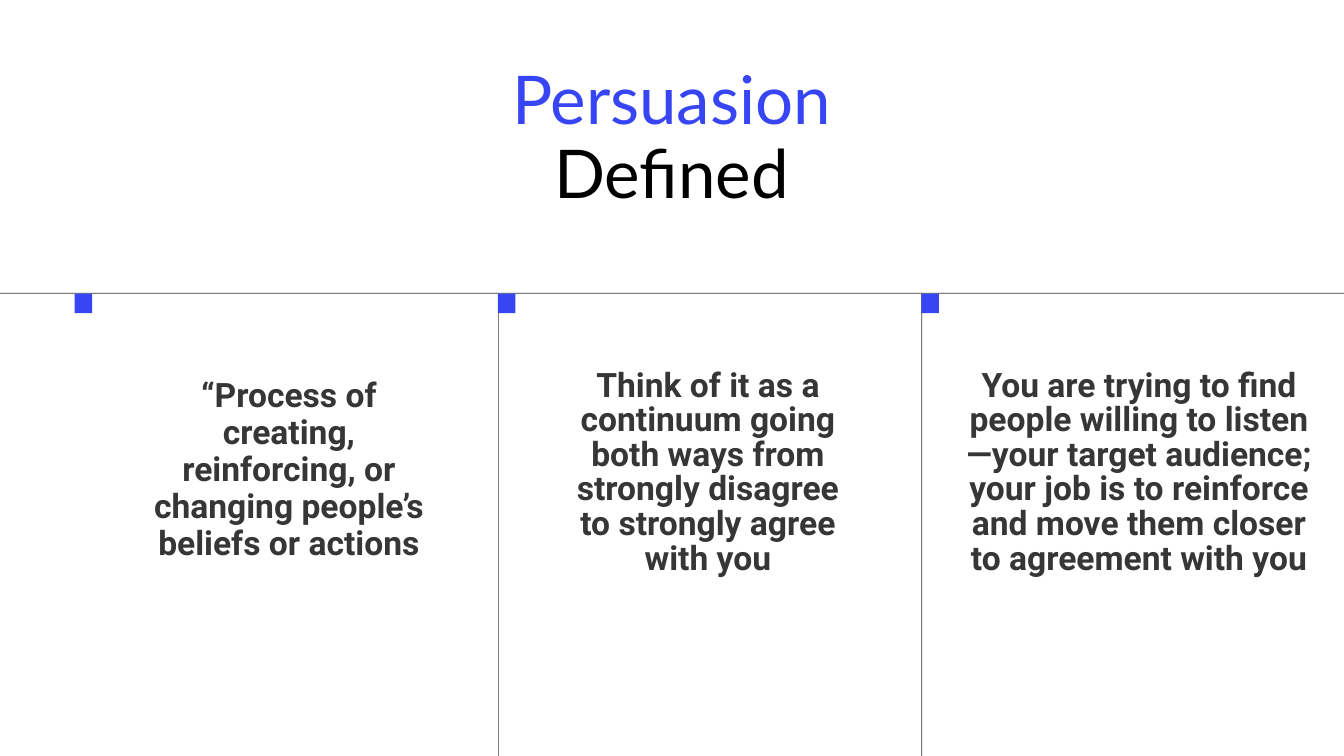
import pptx
import pptx.dml.color
import pptx.enum.shapes
import pptx.enum.text
import pptx.util

Pt = pptx.util.Pt
BLUE = pptx.dml.color.RGBColor(0x37, 0x45, 0xF4)
BLACK = pptx.dml.color.RGBColor(0x00, 0x00, 0x00)
CHARCOAL = pptx.dml.color.RGBColor(0x37, 0x36, 0x36)
WHITE = pptx.dml.color.RGBColor(0xFF, 0xFF, 0xFF)

SLIDE_WIDTH, SLIDE_HEIGHT = 1440, 810
RULE_TOP, RULE_WEIGHT = 313.92, 0.72
COLUMNS_TOP = RULE_TOP + RULE_WEIGHT
FIRST_COLUMN, COLUMN_PITCH = 80, 453.6
MARKER_WIDTH, MARKER_HEIGHT = 18.72, 20.88

# Text, box (left, top, width, height), left inset, line spacing
COLUMNS = [
    ("“Process of creating, reinforcing, or changing people’s beliefs or actions",
     (123.12, 403.92, 342.72, 282.96), 30.24, 39.6),
    ("Think of it as a continuum going both ways from strongly disagree "
     "to strongly agree with you",
     (614.16, 396, 288.72, 298.8), 0, 37),
    ("You are trying to find people willing to listen—your target audience; "
     "your job is to reinforce and move them closer to agreement with you",
     (1031.76, 396, 377.28, 336.24), 0, 37),
]


def place(shape, left, top, width, height):
    shape.left, shape.top = Pt(left), Pt(top)
    shape.width, shape.height = Pt(width), Pt(height)


def prepare_paragraph(shape, line_spacing, left_inset=0):
    """Set up the shape's text frame and return its centred first paragraph."""
    frame = shape.text_frame
    frame.word_wrap = True
    frame.auto_size = pptx.enum.text.MSO_AUTO_SIZE.NONE
    frame.vertical_anchor = pptx.enum.text.MSO_ANCHOR.TOP
    frame.margin_left = Pt(left_inset)
    frame.margin_top = frame.margin_right = frame.margin_bottom = 0
    paragraph = frame.paragraphs[0]
    paragraph.alignment = pptx.enum.text.PP_ALIGN.CENTER
    paragraph.line_spacing = Pt(line_spacing)
    return paragraph


def add_run(paragraph, text, font_name, size, color, bold=False):
    run = paragraph.add_run()
    run.text = text
    run.font.name = font_name
    run.font.size = Pt(size)
    run.font.bold = bold
    run.font.color.rgb = color


def add_block(slide, left, top, width, height, color):
    shape = slide.shapes.add_shape(
        pptx.enum.shapes.MSO_SHAPE.RECTANGLE,
        Pt(left), Pt(top), Pt(width), Pt(height))
    shape.shadow.inherit = False
    shape.fill.solid()
    shape.fill.fore_color.rgb = color
    shape.line.fill.background()


def fill_title(title):
    place(title, 275.76, 69.12, 887.76, 159.84)
    paragraph = prepare_paragraph(title, 79.2)
    add_run(paragraph, "Persuasion", "Lato", 72, BLUE)
    paragraph.add_line_break()
    add_run(paragraph, "Defined", "Lato", 72, BLACK)


def add_column_text(slide, text, box, left_inset, line_spacing):
    text_box = slide.shapes.add_textbox(*(Pt(length) for length in box))
    paragraph = prepare_paragraph(text_box, line_spacing, left_inset)
    add_run(paragraph, text, "Roboto", 36, CHARCOAL, bold=True)


def main():
    presentation = pptx.Presentation()
    presentation.slide_width = Pt(SLIDE_WIDTH)
    presentation.slide_height = Pt(SLIDE_HEIGHT)
    slide = presentation.slides.add_slide(presentation.slide_layouts.get_by_name("Title Only"))
    slide.background.fill.solid()
    slide.background.fill.fore_color.rgb = WHITE

    fill_title(slide.shapes.title)
    add_block(slide, 0, RULE_TOP, SLIDE_WIDTH, RULE_WEIGHT, CHARCOAL)
    column_lefts = [FIRST_COLUMN + index * COLUMN_PITCH for index in range(len(COLUMNS))]
    for left in column_lefts[1:]:
        add_block(slide, left, COLUMNS_TOP, RULE_WEIGHT, SLIDE_HEIGHT - COLUMNS_TOP, CHARCOAL)
    for left in column_lefts:
        add_block(slide, left, COLUMNS_TOP, MARKER_WIDTH, MARKER_HEIGHT, BLUE)
    for column in COLUMNS:
        add_column_text(slide, *column)

    presentation.save("out.pptx")


if __name__ == "__main__":
    main()
